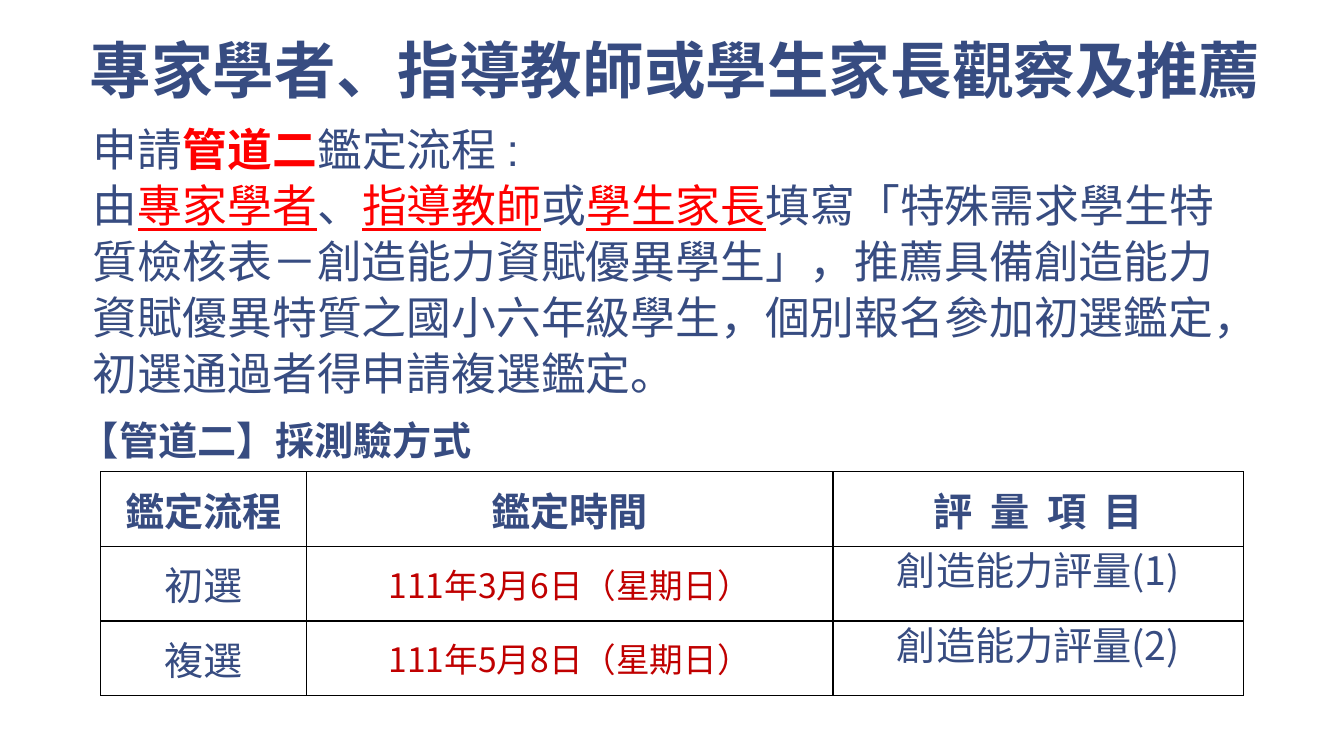
"""Build the slide on identifying creative students through expert, teacher or parent referral."""
from dataclasses import dataclass

from lxml.etree import SubElement
from pptx import Presentation
from pptx.dml.color import RGBColor
from pptx.enum.text import MSO_ANCHOR as Anchor, PP_ALIGN as Align
from pptx.oxml.ns import qn
from pptx.util import Pt


@dataclass(frozen=True)
class Theme:
    navy: str = "374C81"
    red: str = "FF0000"
    crimson: str = "C00000"
    white: str = "FFFFFF"
    black: str = "000000"
    main_font: str = "Arial"
    table_font: str = "Noto Sans CJK SC"
    title_size: int = 44
    body_size: int = 32
    table_size: int = 28
    date_size: int = 24


THEME = Theme()
PLAIN, STRONG, LINED = "plain", "strong", "lined"


def style_font(font, name, size, color, bold=False):
    font.name, font.size, font.bold = name, Pt(size), bold
    font.color.rgb = RGBColor.from_string(color)


def add_box(page, left, top, width, height, anchor, inset_x, inset_y):
    frame = page.shapes.add_textbox(Pt(left), Pt(top), Pt(width), Pt(height)).text_frame
    frame.word_wrap = True
    frame.vertical_anchor = anchor
    frame.margin_left = frame.margin_right = Pt(inset_x)
    frame.margin_top = frame.margin_bottom = Pt(inset_y)
    return frame


def add_heading(page, text, place, anchor, insets, font_name, size, spacing=1.0):
    para = add_box(page, *place, anchor, *insets).paragraphs[0]
    para.text = text
    para.line_spacing = spacing
    style_font(para.font, font_name, size, THEME.navy, bold=True)


def add_body(page, lines):
    frame = add_box(page, 57, 80.6, 831, 215, Anchor.TOP, 9.4, 5)
    for index, spans in enumerate(lines):
        para = frame.add_paragraph() if index else frame.paragraphs[0]
        para.line_spacing = Pt(40)
        for text, kind in spans:
            span = para.add_run()
            span.text = text
            color = THEME.navy if kind == PLAIN else THEME.red
            style_font(span.font, THEME.main_font, THEME.body_size, color, kind == STRONG)
            span.font.underline = kind == LINED


def add_borders(cell):
    properties = cell._tc.get_or_add_tcPr()
    for position, side in enumerate(("a:lnL", "a:lnR", "a:lnT", "a:lnB")):
        line = properties.makeelement(qn(side), {"w": str(Pt(1))})
        fill = SubElement(line, qn("a:solidFill"))
        SubElement(fill, qn("a:srgbClr"), val=THEME.black)
        properties.insert(position, line)


def fill_cell(cell, text, size, color, bold):
    cell.fill.solid()
    cell.fill.fore_color.rgb = RGBColor.from_string(THEME.white)
    add_borders(cell)
    cell.margin_left = cell.margin_right = Pt(5)
    cell.margin_top = cell.margin_bottom = 0
    cell.vertical_anchor = Anchor.MIDDLE
    para = cell.text_frame.paragraphs[0]
    para.text = text
    para.alignment = Align.CENTER
    style_font(para.font, THEME.table_font, size, color, bold)
    return para


def add_schedule(page, rows, widths, row_height):
    frame = page.shapes.add_table(len(rows), len(widths), Pt(72), Pt(337),
                                  Pt(sum(widths)), Pt(row_height * len(rows)))
    table = frame.table
    table.first_row = table.horz_banding = False
    for column, width in zip(table.columns, widths):
        column.width = Pt(width)
    for row_index, texts in enumerate(rows):
        table.rows[row_index].height = Pt(row_height)
        for column_index, text in enumerate(texts):
            header = row_index == 0
            date = column_index == 1 and not header
            cell = table.cell(row_index, column_index)
            para = fill_cell(cell, text,
                             THEME.date_size if date else THEME.table_size,
                             THEME.crimson if date else THEME.navy, header)
            if column_index == 2 and header:
                para.runs[0].font._element.set("spc", "310")
            elif column_index == 2:
                cell.vertical_anchor = Anchor.TOP
                para.line_spacing = Pt(36)


def main():
    deck = Presentation()
    deck.slide_width, deck.slide_height = Pt(960), Pt(540)
    page = deck.slides.add_slide(deck.slide_layouts[6])
    add_body(page, [
        [("申請", PLAIN), ("管道二", STRONG), ("鑑定流程 :", PLAIN)],
        [("由", PLAIN), ("專家學者", LINED), ("、", PLAIN), ("指導教師", LINED),
         ("或", PLAIN), ("學生家長", LINED),
         ("填寫「特殊需求學生特質檢核表－創造能力資賦優異學生」，"
          "推薦具備創造能力資賦優異特質之國小六年級學生，"
          "個別報名參加初選鑑定，初選通過者得申請複選鑑定。", PLAIN)],
    ])
    add_schedule(page, [
        ("鑑定流程", "鑑定時間", "評 量 項 目"),
        ("初選", "111年3月6日（星期日）", "創造能力評量(1)"),
        ("複選", "111年5月8日（星期日）", "創造能力評量(2)"),
    ], (147, 376, 293.5), 53.3)
    add_heading(page, "【管道二】採測驗方式", (50, 292, 310, 44), Anchor.MIDDLE,
                (7.2, 0), THEME.table_font, THEME.table_size)
    add_heading(page, "專家學者、指導教師或學生家長觀察及推薦", (54.7, 3.6, 862.6, 77),
                Anchor.BOTTOM, (9.4, 5), THEME.main_font, THEME.title_size, 0.85)
    deck.save("out.pptx")


if __name__ == "__main__":
    main()
